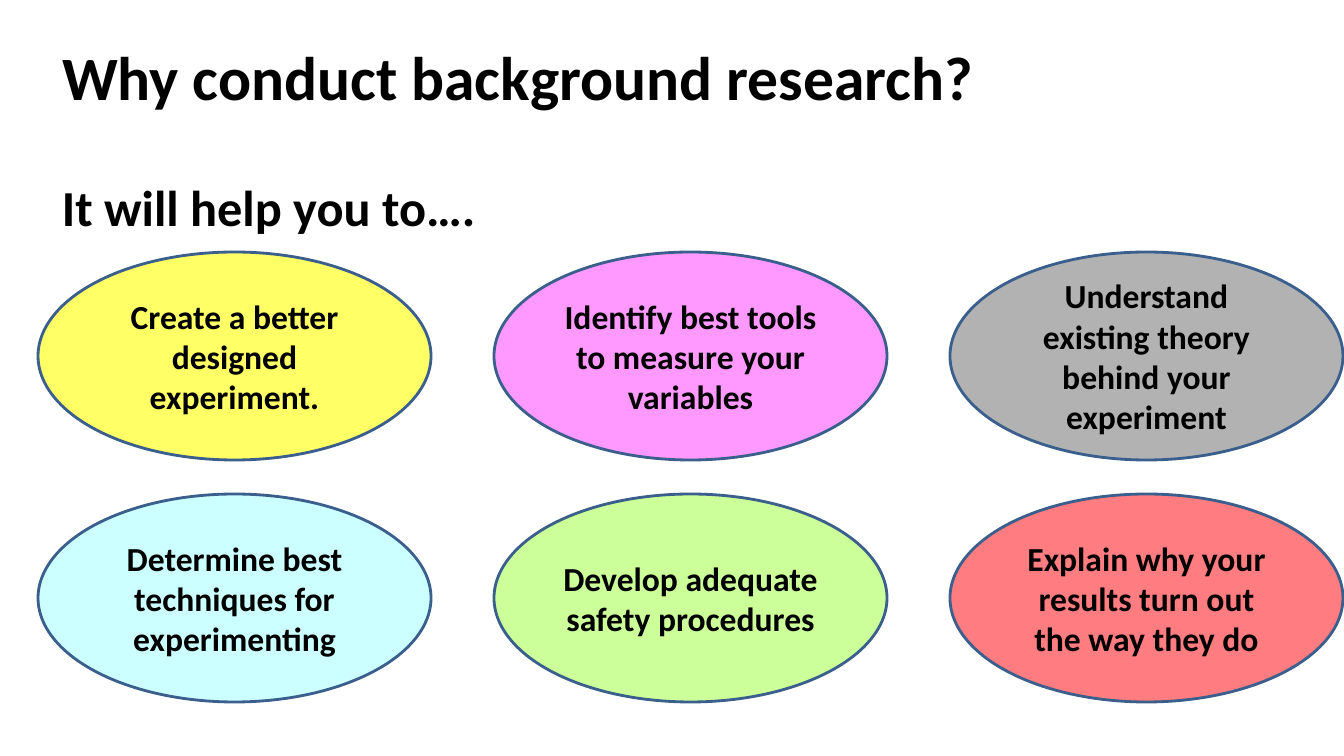
from pptx import Presentation
from pptx.dml.color import RGBColor
from pptx.enum.shapes import MSO_SHAPE
from pptx.enum.text import MSO_ANCHOR, MSO_AUTO_SIZE, PP_ALIGN
from pptx.util import Emu, Pt

SLIDE_W, SLIDE_H = 1344, 756
COLORS = {
    "text": "000000", "outline": "3A5F8C",
    "yellow": "FFFF66", "pink": "FF99FF", "gray": "B2B2B2",
    "cyan": "CCFFFF", "green": "CCFF99", "red": "FF7C80",
}
REASONS = [
    [("Create a better designed experiment.", "yellow"),
     ("Identify best tools to measure your variables", "pink"),
     ("Understand existing theory behind your experiment", "gray")],
    [("Determine best techniques for experimenting", "cyan"),
     ("Develop adequate safety procedures", "green"),
     ("Explain why your results turn out the way they do", "red")],
]


def px(length):
    return Emu(round(length * 914400 / 100.8))


def color(name):
    return RGBColor.from_string(COLORS[name])


def write(shape, text, size, align, anchor):
    frame = shape.text_frame
    frame.text = text
    frame.word_wrap = True
    frame.auto_size = MSO_AUTO_SIZE.NONE
    frame.vertical_anchor = anchor
    paragraph = frame.paragraphs[0]
    paragraph.alignment = align
    font = paragraph.font
    font.name, font.size, font.bold = "Calibri", Pt(size), True
    font.color.rgb = color("text")


def add_heading(slide, left, top, width):
    # Question
    question = slide.shapes.title
    question.left, question.top = px(left), px(top)
    question.width, question.height = px(width), px(86)
    write(question, "Why conduct background research?", 44,
          PP_ALIGN.LEFT, MSO_ANCHOR.TOP)

    # Lead-in to the reasons
    lead_in = slide.shapes.add_textbox(px(left), px(top + 137), px(width), px(72))
    write(lead_in, "It will help you to….", 36, PP_ALIGN.LEFT, MSO_ANCHOR.TOP)


def add_reasons(slide, left, top, width, height):
    oval_w, oval_h = 393, 208
    step_x = (width - oval_w) / (len(REASONS[0]) - 1)
    step_y = (height - oval_h) / (len(REASONS) - 1)
    for row, reasons in enumerate(REASONS):
        for column, (text, fill) in enumerate(reasons):
            reason = slide.shapes.add_shape(
                MSO_SHAPE.OVAL, px(left + column * step_x),
                px(top + row * step_y), px(oval_w), px(oval_h))
            reason.shadow.inherit = False
            reason.fill.solid()
            reason.fill.fore_color.rgb = color(fill)
            reason.line.color.rgb = color("outline")
            reason.line.width = Pt(2)
            write(reason, text, 24, PP_ALIGN.CENTER, MSO_ANCHOR.MIDDLE)


def main():
    deck = Presentation()
    deck.slide_width, deck.slide_height = px(SLIDE_W), px(SLIDE_H)
    slide = deck.slides.add_slide(deck.slide_layouts[5])
    add_heading(slide, 52, 34, 1266)
    add_reasons(slide, 38, 252, 1305, 450)
    deck.save("out.pptx")


if __name__ == "__main__":
    main()
